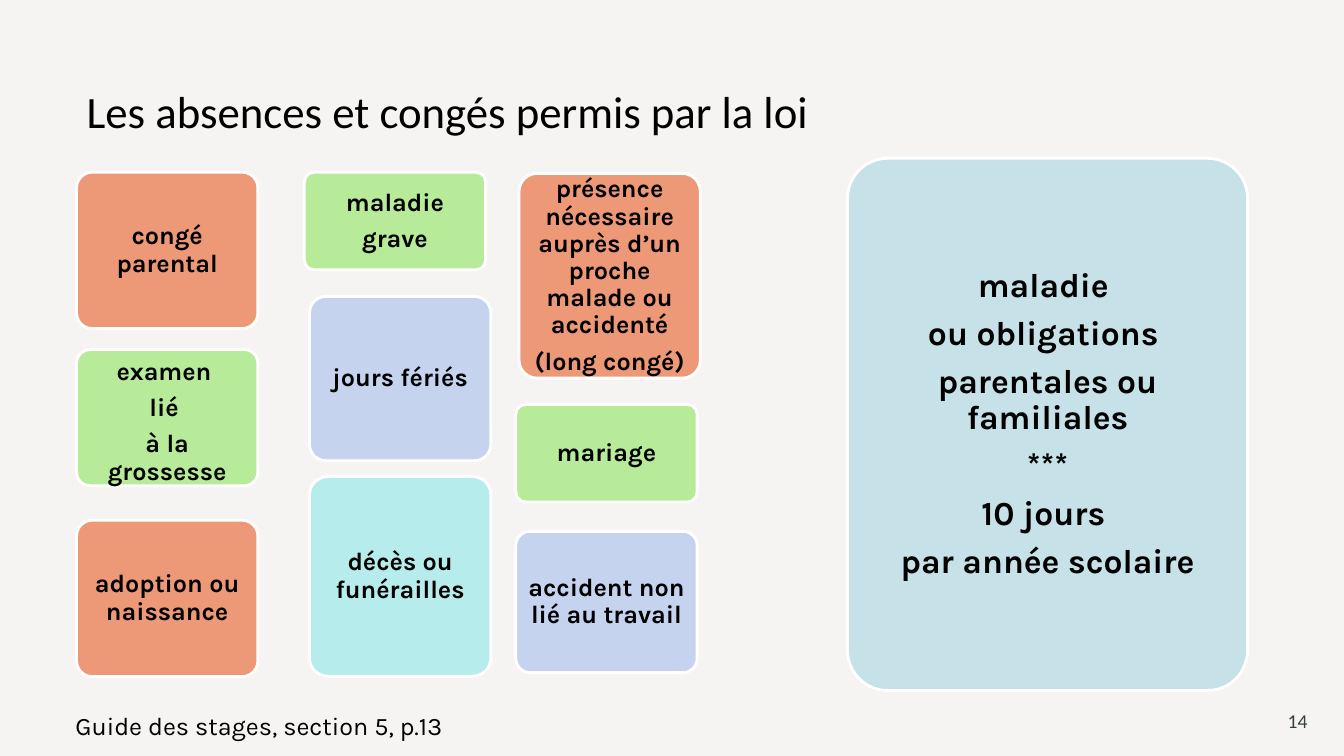
from dataclasses import dataclass

from lxml.etree import SubElement
from pptx import Presentation
from pptx.dml.color import RGBColor
from pptx.enum.shapes import MSO_SHAPE
from pptx.enum.text import MSO_ANCHOR, PP_ALIGN
from pptx.oxml.ns import qn
from pptx.slide import Slide
from pptx.text.text import TextFrame
from pptx.util import Cm, Pt

BACKGROUND = RGBColor(0xF6, 0xF4, 0xF2)
BLACK = RGBColor(0x00, 0x00, 0x00)
WHITE = RGBColor(0xFF, 0xFF, 0xFF)
DARK_GREEN = RGBColor(0x35, 0x40, 0x3A)
ORANGE = RGBColor(0xED, 0x99, 0x78)
GREEN = RGBColor(0xB7, 0xEB, 0x99)
LAVENDER = RGBColor(0xC5, 0xD3, 0xEE)
TURQUOISE = RGBColor(0xB7, 0xEC, 0xEC)
SKY = RGBColor(0xAE, 0xD7, 0xE4)

LEFT_COLUMN, MIDDLE_COLUMN, RIGHT_COLUMN = 1.93, 7.8, 13.0
CARD_WIDTH = 4.57


@dataclass(frozen=True)
class Card:
    """A rounded box, with its place in centimetres."""
    left: float
    top: float
    height: float
    color: RGBColor
    lines: tuple[str, ...]
    width: float = CARD_WIDTH
    size: int = 18
    top_inset: float = 0.1
    opacity: int = 100


CARDS = (
    Card(MIDDLE_COLUMN, 7.47, 4.14, LAVENDER, ("jours fériés",)),
    Card(MIDDLE_COLUMN, 12.01, 5.03, TURQUOISE, ("décès ou funérailles",)),
    Card(LEFT_COLUMN, 8.81, 3.43, GREEN,
         ("examen ", "lié ", "à la grossesse"), top_inset=0.33),
    Card(21.36, 3.99, 13.41, SKY,
         ("maladie ", "ou obligations ", "parentales ou familiales", "***",
          "10 jours ", "par année scolaire"),
         width=10.08, size=24, opacity=65),
    Card(LEFT_COLUMN, 13.11, 3.94, ORANGE, ("adoption ou naissance",)),
    Card(RIGHT_COLUMN, 10.19, 2.46, GREEN, ("mariage",)),
    Card(RIGHT_COLUMN, 13.39, 3.56, LAVENDER, ("accident non lié au travail",)),
    Card(LEFT_COLUMN, 4.34, 3.94, ORANGE, ("congé parental",)),
    Card(7.67, 4.34, 2.46, GREEN, ("maladie", "grave")),
    Card(13.08, 4.37, 5.16, ORANGE,
         ("présence nécessaire auprès d’un proche malade ou accidenté",
          "(long congé)")),
)


def write_lines(frame: TextFrame, lines: tuple[str, ...],
                font_format: dict, paragraph_format: dict) -> None:
    frame.word_wrap = True
    for index, line in enumerate(lines):
        paragraph = frame.add_paragraph() if index else frame.paragraphs[0]
        for name, value in paragraph_format.items():
            setattr(paragraph, name, value)
        run = paragraph.add_run()
        run.text = line
        run.font.color.rgb = font_format["color"]
        for name in ("name", "size", "bold"):
            setattr(run.font, name, font_format.get(name))


def add_card(slide: Slide, card: Card) -> None:
    shape = slide.shapes.add_shape(
        MSO_SHAPE.ROUNDED_RECTANGLE,
        Cm(card.left), Cm(card.top), Cm(card.width), Cm(card.height))
    shape.adjustments[0] = 0.1
    shape.shadow.inherit = False
    shape.fill.solid()
    shape.fill.fore_color.rgb = card.color
    if card.opacity < 100:
        color = shape.fill._xPr.find(qn("a:solidFill"))[0]
        SubElement(color, qn("a:alpha"), val=str(card.opacity * 1000))
    shape.line.color.rgb = WHITE
    shape.line.width = Pt(2)
    frame = shape.text_frame
    frame_format = {
        "vertical_anchor": MSO_ANCHOR.MIDDLE,
        "margin_left": Cm(0.12), "margin_right": Cm(0.12),
        "margin_top": Cm(card.top_inset), "margin_bottom": Cm(0.1),
    }
    for name, value in frame_format.items():
        setattr(frame, name, value)
    write_lines(
        frame, card.lines,
        {"name": "Karla", "size": Pt(card.size), "bold": True, "color": BLACK},
        {"alignment": PP_ALIGN.CENTER, "line_spacing": 0.9,
         "space_after": Pt(0.35 * card.size)})


def add_title(slide: Slide) -> None:
    title = slide.shapes.title
    place = {"left": Cm(1.93), "top": Cm(1.63), "width": Cm(29.51), "height": Cm(1.96)}
    for name, value in place.items():
        setattr(title, name, value)
    title.text_frame.vertical_anchor = MSO_ANCHOR.BOTTOM
    write_lines(title.text_frame, ("Les absences et congés permis par la loi",),
                {"name": "Calibri", "size": Pt(32), "color": BLACK},
                {"alignment": PP_ALIGN.LEFT})


def add_footer(slide: Slide) -> None:
    number = slide.shapes.add_textbox(Cm(31.75), Cm(17.65), Cm(1.45), Cm(1.02))
    number.text_frame.vertical_anchor = MSO_ANCHOR.MIDDLE
    write_lines(number.text_frame, ("14",),
                {"name": "Calibri", "size": Pt(14), "color": DARK_GREEN},
                {"alignment": PP_ALIGN.RIGHT, "space_after": Pt(6)})
    reference = slide.shapes.add_textbox(Cm(1.65), Cm(17.78), Cm(16.94), Cm(1.02))
    write_lines(reference.text_frame, ("Guide des stages, section 5, p.13",),
                {"name": "Karla", "size": Pt(18), "color": BLACK},
                {"alignment": PP_ALIGN.LEFT})


def main() -> None:
    presentation = Presentation()
    presentation.slide_width = Cm(33.87)
    presentation.slide_height = Cm(19.05)
    slide = presentation.slides.add_slide(presentation.slide_layouts[5])
    slide.background.fill.solid()
    slide.background.fill.fore_color.rgb = BACKGROUND
    add_title(slide)
    for card in CARDS:
        add_card(slide, card)
    add_footer(slide)
    presentation.save("out.pptx")


if __name__ == "__main__":
    main()
